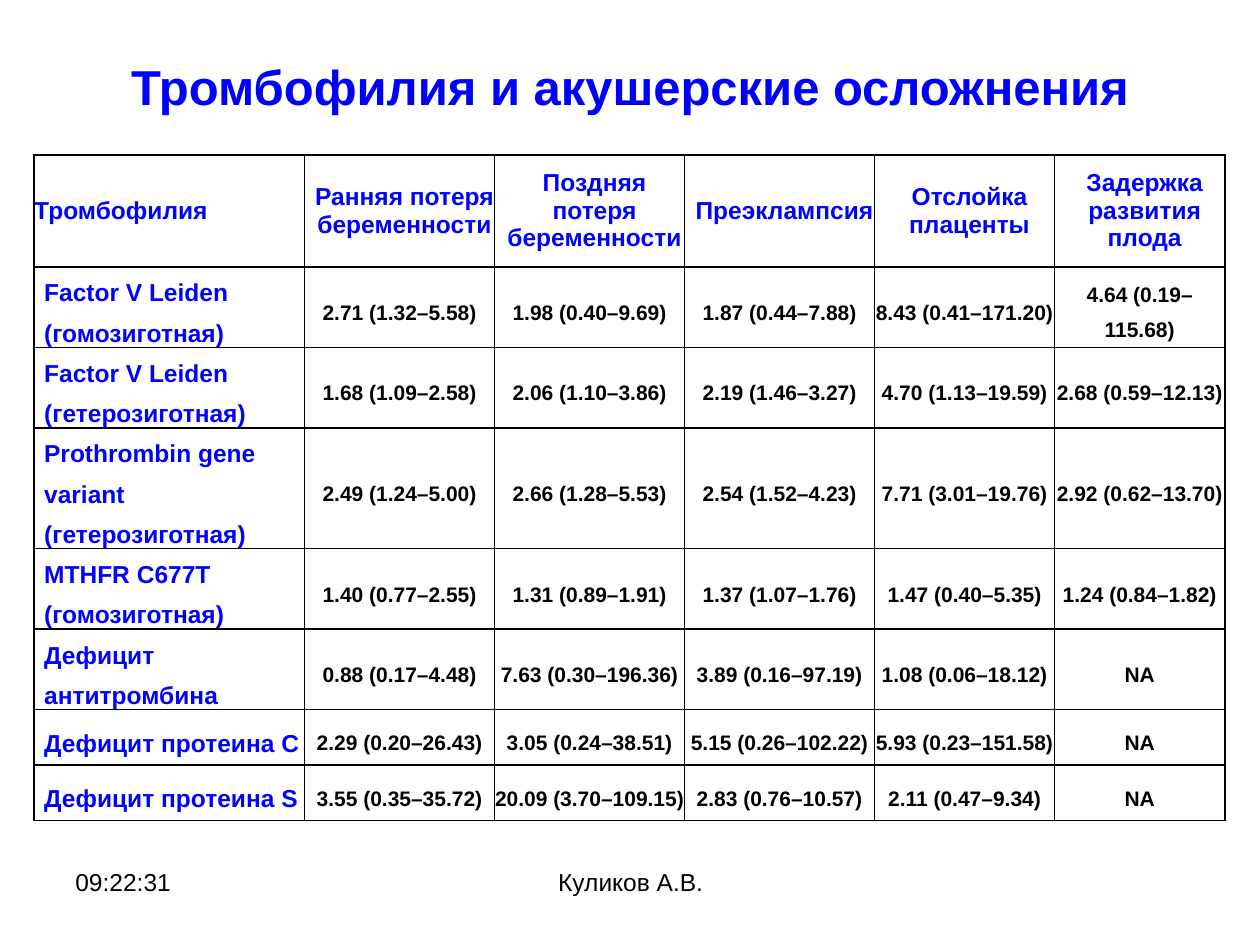
from lxml import etree
from pptx import Presentation
from pptx.dml.color import RGBColor
from pptx.enum.text import MSO_ANCHOR, PP_ALIGN
from pptx.oxml.ns import qn
from pptx.util import Cm, Pt

LEFT, CENTER = PP_ALIGN.LEFT, PP_ALIGN.CENTER
TOP, MIDDLE = MSO_ANCHOR.TOP, MSO_ANCHOR.MIDDLE
BLUE, BLACK = "0000FF", "000000"
INDENT = Cm(0.2)

HEADS = ["Тромбофилия", "Ранняя потеря беременности", "Поздняя потеря беременности",
         "Преэклампсия", "Отслойка плаценты", "Задержка развития плода"]
ROWS = [
    ["Factor V Leiden (гомозиготная)", "2.71 (1.32–5.58)", "1.98 (0.40–9.69)",
     "1.87 (0.44–7.88)", "8.43 (0.41–171.20)", "4.64 (0.19–115.68)"],
    ["Factor V Leiden (гетерозиготная)", "1.68 (1.09–2.58)", "2.06 (1.10–3.86)",
     "2.19 (1.46–3.27)", "4.70 (1.13–19.59)", "2.68 (0.59–12.13)"],
    ["Prothrombin gene variant (гетерозиготная)", "2.49 (1.24–5.00)", "2.66 (1.28–5.53)",
     "2.54 (1.52–4.23)", "7.71 (3.01–19.76)", "2.92 (0.62–13.70)"],
    ["MTHFR C677T (гомозиготная)", "1.40 (0.77–2.55)", "1.31 (0.89–1.91)",
     "1.37 (1.07–1.76)", "1.47 (0.40–5.35)", "1.24 (0.84–1.82)"],
    ["Дефицит антитромбина", "0.88 (0.17–4.48)", "7.63 (0.30–196.36)",
     "3.89 (0.16–97.19)", "1.08 (0.06–18.12)", "NA"],
    ["Дефицит протеина С", "2.29 (0.20–26.43)", "3.05 (0.24–38.51)",
     "5.15 (0.26–102.22)", "5.93 (0.23–151.58)", "NA"],
    ["Дефицит протеина S", "3.55 (0.35–35.72)", "20.09 (3.70–109.15)",
     "2.83 (0.76–10.57)", "2.11 (0.47–9.34)", "NA"],
]
WIDTHS = [5.45, 3.83, 3.83, 3.83, 3.63, 3.43]
HEIGHTS = [2.26, 1.62, 1.62, 2.43, 1.62, 1.62, 1.12, 1.12]

# text, box in cm, size, colour, bold, alignment, anchor
TEXTS = [
    ("Тромбофилия и акушерские осложнения", (1.27, 0.76, 22.86, 1.96),
     28, BLUE, True, CENTER, MIDDLE),
    ("09:22:31", (1.27, 17.35, 5.92, 1.32), 14, BLACK, False, LEFT, TOP),
    ("Куликов А.В.", (8.69, 17.35, 8.05, 1.32), 14, BLACK, False, CENTER, TOP),
]


def style(par, size, color, bold, align):
    par.alignment = align
    font = par.font
    font.name, font.size, font.bold = "Arial", Pt(size), bold
    font.color.rgb = RGBColor.from_string(color)


def frame(cell):
    """Draw a thin black line on all four sides of a cell."""
    props = cell._tc.get_or_add_tcPr()
    for i, side in enumerate(("a:lnL", "a:lnR", "a:lnT", "a:lnB")):
        line = etree.Element(qn(side), w=str(Pt(1)))
        fill = etree.SubElement(line, qn("a:solidFill"))
        etree.SubElement(fill, qn("a:srgbClr"), val=BLACK)
        props.insert(i, line)


def fill_cell(cell, text, row, col):
    cell.text = text
    cell.vertical_anchor = MIDDLE
    cell.margin_left = cell.margin_right = cell.margin_top = cell.margin_bottom = 0
    cell.fill.background()
    frame(cell)
    par = cell.text_frame.paragraphs[0]
    label = row == 0 or col == 0
    style(par, 14 if label else 12, BLUE if label else BLACK, True,
          CENTER if col else LEFT)
    if label and (row or col):
        props = par._p.get_or_add_pPr()
        props.set("marL", str(INDENT))
        props.set("indent", "0")
    if row and col:
        par.line_spacing = 1.5
    elif row:
        par.line_spacing, par.space_before = Pt(23), Pt(6)


def add_grid(slide):
    data = [HEADS] + ROWS
    table = slide.shapes.add_table(
        len(data), len(HEADS), Cm(0.69), Cm(3.12),
        Cm(sum(WIDTHS)), Cm(sum(HEIGHTS))).table
    table.first_row = table.horz_banding = False
    for col, width in zip(table.columns, WIDTHS):
        col.width = Cm(width)
    for row, height in zip(table.rows, HEIGHTS):
        row.height = Cm(height)
    for r, line in enumerate(data):
        for c, text in enumerate(line):
            fill_cell(table.cell(r, c), text, r, c)


def main():
    prs = Presentation()
    prs.slide_width, prs.slide_height = Cm(25.4), Cm(19.05)
    slide = prs.slides.add_slide(prs.slide_layouts[6])
    add_grid(slide)
    for text, box, size, color, bold, align, anchor in TEXTS:
        body = slide.shapes.add_textbox(*map(Cm, box)).text_frame
        body.word_wrap, body.vertical_anchor = True, anchor
        body.text = text
        style(body.paragraphs[0], size, color, bold, align)
    prs.save("out.pptx")


if __name__ == "__main__":
    main()
